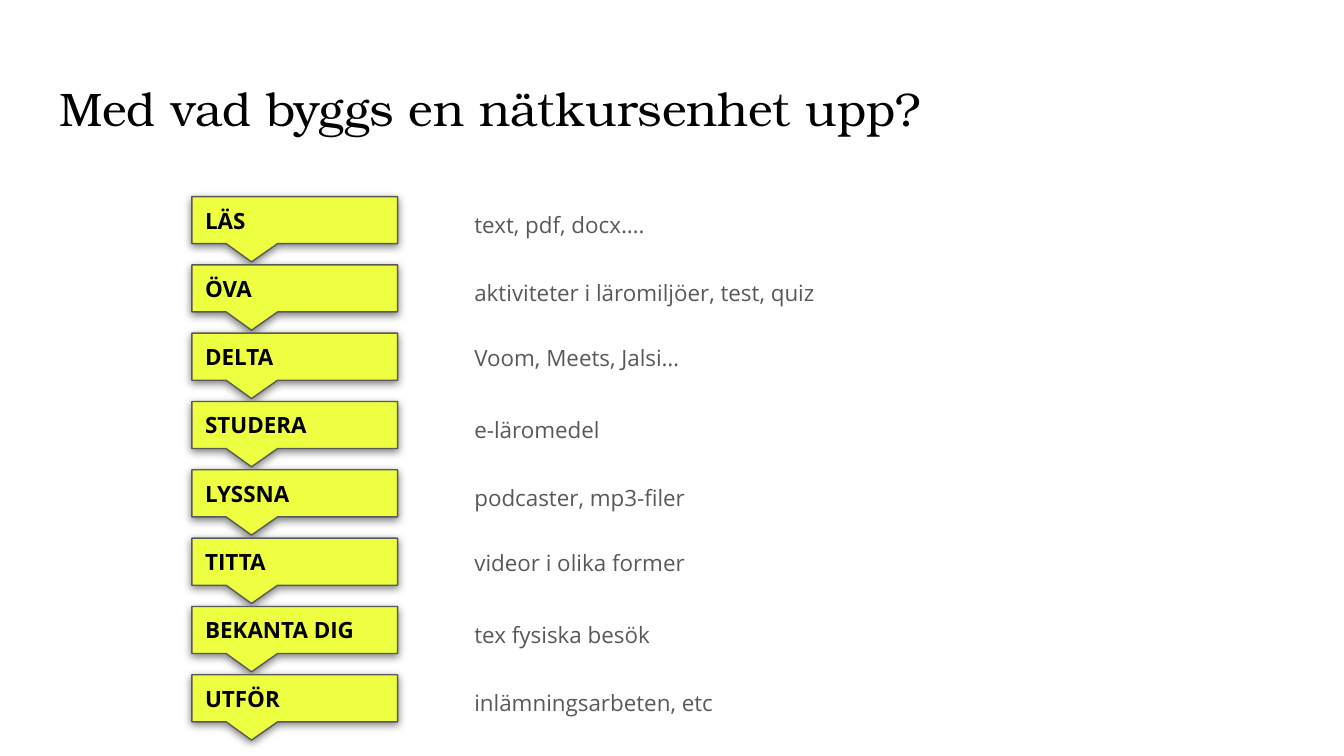
"""Build a slide that lists the parts of an online course unit."""
from lxml.etree import SubElement
from pptx import Presentation
from pptx.dml.color import RGBColor as Color
from pptx.enum.shapes import MSO_SHAPE as Shape
from pptx.enum.text import MSO_ANCHOR as Anchor, MSO_AUTO_SIZE as AutoSize, PP_ALIGN as Align
from pptx.oxml.ns import qn
from pptx.util import Pt

TITLE = "Med vad byggs en nätkursenhet upp?"
STEPS = [
    ("LÄS", "text, pdf, docx….", 0),
    ("ÖVA", "aktiviteter i läromiljöer, test, quiz", 0),
    ("DELTA", "Voom, Meets, Jalsi…", -2.2),
    ("STUDERA", "e-läromedel", 0),
    ("LYSSNA", "podcaster, mp3-filer", 0),
    ("TITTA", "videor i olika former", -2.2),
    ("BEKANTA DIG", "tex fysiska besök", 0),
    ("UTFÖR", "inlämningsarbeten, etc", 0),
]

THEME = {
    "title": {"name": "TeX Gyre Bonum", "size": Pt(25.2), "bold": False, "color": "000000"},
    "step": {"name": "Open Sans", "size": Pt(12), "bold": True, "color": "000000"},
    "detail": {"name": "Open Sans", "size": Pt(12), "bold": False, "color": "595959"},
    "fill": "EEFF41",
    "line": "595959",
    "shadow": "000000",
}
FRAME = {
    "word_wrap": True,
    "auto_size": AutoSize.NONE,
    "margin_left": Pt(7.2),
    "margin_right": Pt(7.2),
    "margin_top": Pt(7.2),
    "margin_bottom": Pt(7.2),
}
DETAIL_PARAGRAPH = {"line_spacing": 1.15, "space_after": Pt(12)}

PAGE = (720, 405)
TITLE_BOX = (24.5, 35.3, 671, 45.4)
STEP_BOX = (102.8, 105.3, 110.2, 25.2)
DETAIL_BOX = (247, 103.8, 236.2, 28.8)
PITCH = 36.6


def apply(target, values):
    for name, value in values.items():
        setattr(target, name, value)


def row_box(box, index, nudge=0):
    left, top, width, height = box
    return [Pt(value) for value in (left, top + index * PITCH + nudge, width, height)]


def write(box, text, style, anchor, paragraph=None):
    frame = box.text_frame
    apply(frame, {**FRAME, "vertical_anchor": anchor})
    para = frame.paragraphs[0]
    apply(para, {"alignment": Align.LEFT, **(paragraph or {})})
    span = para.add_run()
    span.text = text
    values = dict(THEME[style])
    span.font.color.rgb = Color.from_string(values.pop("color"))
    apply(span.font, values)


def cast_shadow(shape):
    shape.shadow.inherit = False
    effects = shape._element.spPr.find(qn("a:effectLst"))
    shadow = SubElement(effects, qn("a:outerShdw"), blurRad=str(Pt(4.5)),
                        dist=str(Pt(1.5)), dir="5400000", algn="bl", rotWithShape="0")
    color = SubElement(shadow, qn("a:srgbClr"), val=THEME["shadow"])
    SubElement(color, qn("a:alpha"), val="50000")


def add_step(page, index, label):
    step = page.shapes.add_shape(Shape.RECTANGULAR_CALLOUT, *row_box(STEP_BOX, index))
    step.adjustments[0], step.adjustments[1] = -0.21, 0.89
    step.fill.solid()
    step.fill.fore_color.rgb = Color.from_string(THEME["fill"])
    step.line.color.rgb = Color.from_string(THEME["line"])
    step.line.width = Pt(0.75)
    cast_shadow(step)
    write(step, label, "step", Anchor.MIDDLE)


def add_detail(page, index, text, nudge):
    detail = page.shapes.add_textbox(*row_box(DETAIL_BOX, index, nudge))
    write(detail, text, "detail", Anchor.TOP, DETAIL_PARAGRAPH)


def main():
    deck = Presentation()
    deck.slide_width, deck.slide_height = map(Pt, PAGE)
    page = deck.slides.add_slide(deck.slide_layouts[5])
    title = page.shapes.title
    apply(title, dict(zip(("left", "top", "width", "height"), map(Pt, TITLE_BOX))))
    write(title, TITLE, "title", Anchor.TOP)
    for index, (label, text, nudge) in enumerate(STEPS):
        add_step(page, index, label)
        add_detail(page, index, text, nudge)
    deck.save("out.pptx")


if __name__ == "__main__":
    main()
